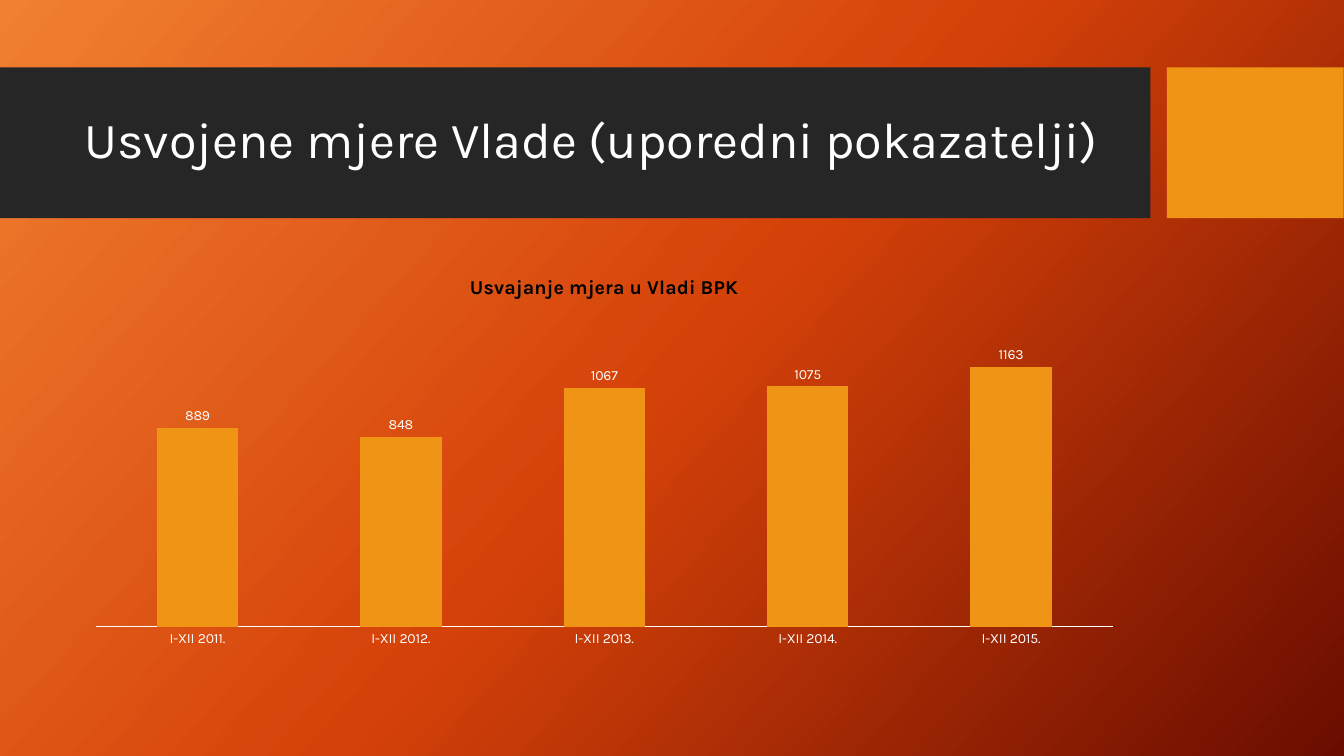
from lxml import etree
from pptx import Presentation
from pptx.chart.data import CategoryChartData
from pptx.dml.color import RGBColor
from pptx.enum.chart import XL_CHART_TYPE as ChartType, XL_LABEL_POSITION as LabelPos, XL_TICK_MARK as Tick
from pptx.enum.shapes import MSO_SHAPE as Shape
from pptx.enum.text import MSO_ANCHOR as Anchor
from pptx.oxml.ns import qn
from pptx.util import Cm, Pt

DARK, ORANGE, WHITE, BLACK = "262626", "F09415", "FFFFFF", "000000"
MEASURES = {"I-XII 2011.": 889, "I-XII 2012.": 848, "I-XII 2013.": 1067,
            "I-XII 2014.": 1075, "I-XII 2015.": 1163}


def rgb(value):
    return RGBColor.from_string(value)


class MeasuresSlide:
    font_name = "Karla"

    def __init__(self, deck):
        self.slide = deck.slides.add_slide(deck.slide_layouts[6])

    def style(self, font, size, color, bold=False):
        font.name, font.size, font.bold = self.font_name, Pt(size), bold
        font.color.rgb = rgb(color)

    def background(self, stops, angle):
        fill = self.slide.background.fill
        fill.gradient()
        fill.gradient_angle = 360 - angle  # the property counts anticlockwise
        stop_list = next(self.slide.element.iter(qn("a:gsLst")))
        for stop in list(stop_list):
            stop_list.remove(stop)
        for percent, color in stops:
            stop = etree.SubElement(stop_list, qn("a:gs"), pos=str(percent * 1000))
            etree.SubElement(stop, qn("a:srgbClr"), val=color)

    def block(self, left, top, width, height, color):
        block = self.slide.shapes.add_shape(
            Shape.RECTANGLE, Cm(left), Cm(top), Cm(width), Cm(height))
        block.shadow.inherit = False
        block.fill.solid()
        block.fill.fore_color.rgb = rgb(color)
        block.line.fill.background()

    def heading(self, text, left, top, width, height):
        frame = self.slide.shapes.add_textbox(
            Cm(left), Cm(top), Cm(width), Cm(height)).text_frame
        frame.word_wrap = True
        frame.vertical_anchor = Anchor.MIDDLE
        frame.text = text
        frame.paragraphs[0].line_spacing = 0.9
        self.style(frame.paragraphs[0].runs[0].font, 36, WHITE)

    def column_chart(self, title, values, left, top, width, height):
        data = CategoryChartData()
        data.categories = list(values)
        data.add_series("Series 1", list(values.values()))
        chart = self.slide.shapes.add_chart(
            ChartType.COLUMN_CLUSTERED, Cm(left), Cm(top), Cm(width), Cm(height), data).chart
        self.style(chart.font, 10, WHITE)
        chart.has_legend = False
        chart.has_title = True
        chart.chart_title.text_frame.text = title
        self.style(chart.chart_title.text_frame.paragraphs[0].runs[0].font, 14, BLACK, True)

        # Axes
        scale = chart.value_axis
        scale.minimum_scale, scale.maximum_scale = 0, 1400
        scale.has_major_gridlines = False
        scale.visible = False
        periods = chart.category_axis
        periods.major_tick_mark = periods.minor_tick_mark = Tick.NONE
        periods.format.line.color.rgb = rgb(WHITE)
        periods.format.line.width = Pt(0.75)

        # Columns and their values
        plot = chart.plots[0]
        plot.gap_width = 150
        plot.vary_by_categories = False
        columns = plot.series[0].format.fill
        columns.solid()
        columns.fore_color.rgb = rgb(ORANGE)
        plot.has_data_labels = True
        labels = plot.data_labels
        labels.show_value = True
        labels.position = LabelPos.OUTSIDE_END
        self.style(labels.font, 10, WHITE)
        self.plot_area(chart, x=0.02, y=0.14, w=0.96, h=0.79)

    def plot_area(self, chart, **fractions):
        area = next(chart.element.iter(qn("c:plotArea")))
        for old in area.findall(qn("c:layout")):
            area.remove(old)
        layout = etree.Element(qn("c:layout"))
        area.insert(0, layout)
        manual = etree.SubElement(layout, qn("c:manualLayout"))
        settings = {"layoutTarget": "inner", "xMode": "edge", "yMode": "edge", **fractions}
        for tag, value in settings.items():
            etree.SubElement(manual, qn("c:" + tag), val=str(value))


def main():
    deck = Presentation()
    deck.slide_width, deck.slide_height = Cm(33.87), Cm(19.05)
    page = MeasuresSlide(deck)
    page.background([(0, "F18031"), (50, "D54209"), (100, "6A0D00")], 42)

    # Title band
    page.block(0, 1.7, 28.99, 3.8, DARK)
    page.block(29.41, 1.7, 4.45, 3.8, ORANGE)
    page.heading("Usvojene mjere Vlade (uporedni pokazatelji)", 1.88, 2.08, 26.7, 3)

    # Adopted measures by year
    page.column_chart("Usvajanje mjera u Vladi BPK", MEASURES, 1.88, 6.5, 26.7, 10)
    deck.save("out.pptx")


if __name__ == "__main__":
    main()
